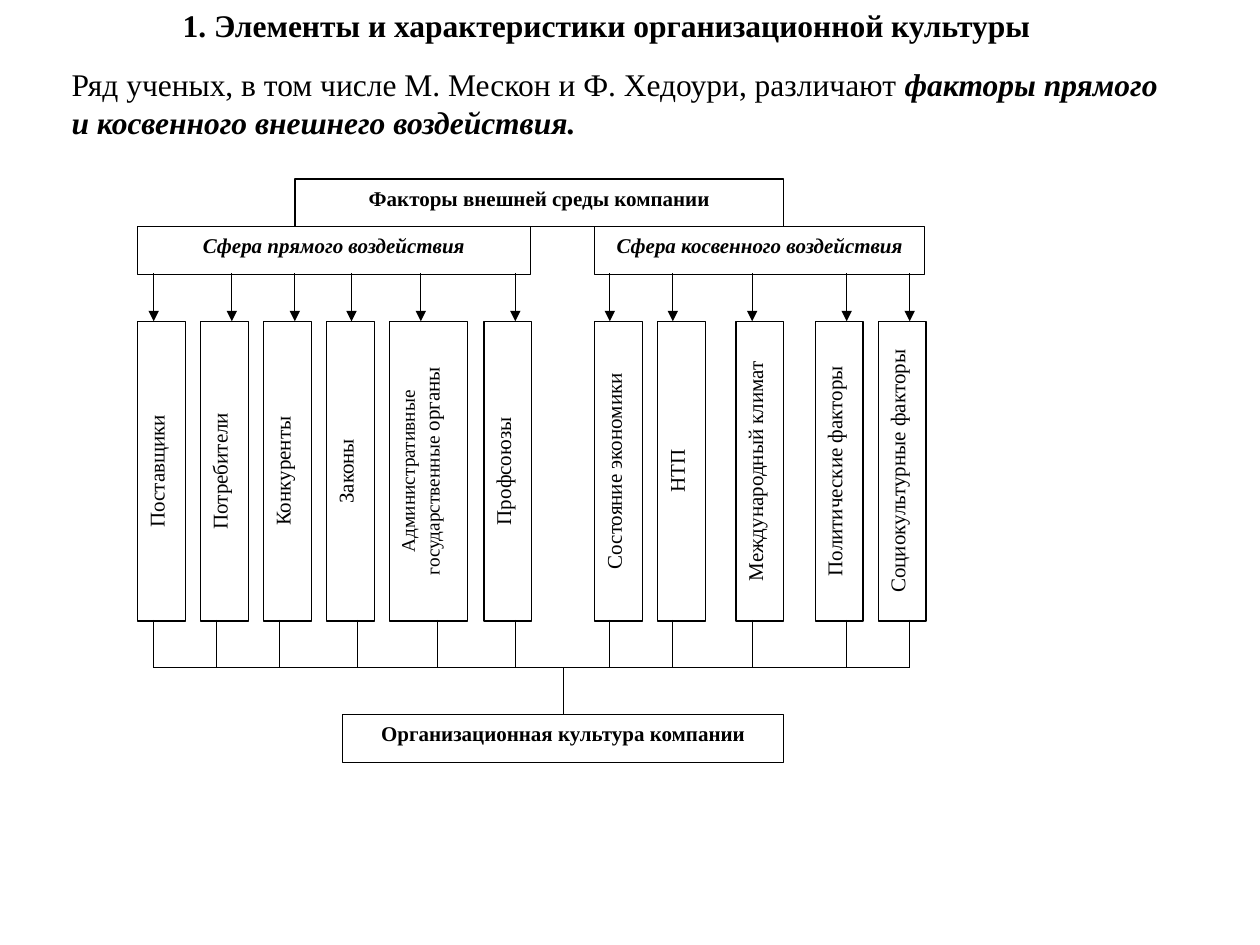
import pptx
import pptx.dml.color
import pptx.enum.shapes
import pptx.enum.text
import pptx.oxml.ns
import pptx.util
from lxml import etree

Inches = pptx.util.Inches
Pt = pptx.util.Pt
ALIGN = pptx.enum.text.PP_ALIGN
FONT = "Times New Roman"
COLORS = {"ink": "000000", "paper": "FFFFFF"}

# Rows of the diagram
BOX_H = 0.38
ROOT_Y, SPHERE_Y, FACTOR_Y, RESULT_Y = 1.42, 1.8, 2.55, 5.67
SPHERE_BOTTOM, FACTOR_BOTTOM, BUS_Y = 2.17, 4.92, 5.3
FACTOR_W, FACTOR_H = 0.38, 2.38

# Factor: left, width, arrow x, lower line x, runs as (text, size)
FACTORS = [
    (1.09, FACTOR_W, 1.22, 1.22, [("Поставщики", 12)]),
    (1.59, FACTOR_W, 1.84, 1.72, [("Потребители", 12)]),
    (2.09, FACTOR_W, 2.34, 2.22, [("Конкуренты", 12)]),
    (2.59, FACTOR_W, 2.79, 2.84, [("Законы", 12)]),
    (3.09, 0.62, 3.34, 3.47,
     [("Административные государственные ", 11), ("органы", 12)]),
    (3.84, FACTOR_W, 4.09, 4.09, [("Профсоюзы", 12)]),
    (4.72, FACTOR_W, 4.84, 4.84, [("Состояние экономики", 12)]),
    (5.22, FACTOR_W, 5.34, 5.34, [("НТП", 12)]),
    (5.84, FACTOR_W, 5.97, 5.97, [("Международный климат", 12)]),
    (6.47, FACTOR_W, 6.72, 6.72, [("Политические факторы", 12)]),
    (6.97, FACTOR_W, 7.22, 7.22, [("Социокультурные факторы", 12)]),
]


def rgb(name):
    return pptx.dml.color.RGBColor.from_string(COLORS[name])


def add_run(p, text, size, bold=False, italic=False):
    r = p.add_run()
    r.text = text
    r.font.name = FONT
    r.font.size = Pt(size)
    r.font.bold = bold
    r.font.italic = italic
    r.font.color.rgb = rgb("ink")


def set_up_frame(tf, align):
    tf.word_wrap = True
    tf.vertical_anchor = pptx.enum.text.MSO_ANCHOR.TOP
    p = tf.paragraphs[0]
    p.alignment = align
    return p


def add_title(s, text):
    sp = s.shapes.title
    sp.left, sp.top = Inches(0.39), Inches(0)
    sp.width, sp.height = Inches(8.91), Inches(0.4)
    p = set_up_frame(sp.text_frame, ALIGN.CENTER)
    sp.text_frame.auto_size = pptx.enum.text.MSO_AUTO_SIZE.SHAPE_TO_FIT_TEXT
    add_run(p, text, 18, bold=True)


def add_intro(s, plain, stressed):
    sp = s.shapes.add_textbox(Inches(0.47), Inches(0.47), Inches(8.98), Inches(0.71))
    p = set_up_frame(sp.text_frame, ALIGN.LEFT)
    sp.text_frame.auto_size = pptx.enum.text.MSO_AUTO_SIZE.SHAPE_TO_FIT_TEXT
    add_run(p, plain, 18)
    add_run(p, stressed, 18, bold=True, italic=True)


def add_box(s, x, y, w, h, runs, bold=False, italic=False, upright=False):
    sp = s.shapes.add_shape(pptx.enum.shapes.MSO_SHAPE.RECTANGLE,
                            Inches(x), Inches(y), Inches(w), Inches(h))
    sp.shadow.inherit = False
    sp.fill.solid()
    sp.fill.fore_color.rgb = rgb("paper")
    sp.line.color.rgb = rgb("ink")
    sp.line.width = Pt(0.75)
    tf = sp.text_frame
    p = set_up_frame(tf, ALIGN.CENTER)
    if upright:
        tf._txBody.bodyPr.set("vert", "vert270")
    for text, size in runs:
        add_run(p, text, size, bold, italic)


def add_line(s, x1, y1, x2, y2, arrow=False):
    line = s.shapes.add_connector(pptx.enum.shapes.MSO_CONNECTOR.STRAIGHT,
                                  Inches(x1), Inches(y1), Inches(x2), Inches(y2))
    line.line.color.rgb = rgb("ink")
    line.line.width = Pt(0.75)
    qn = pptx.oxml.ns.qn
    if arrow:
        etree.SubElement(line.line._get_or_add_ln(), qn("a:tailEnd"), type="triangle")
    etree.SubElement(line._element.spPr, qn("a:effectLst"))


def main():
    prs = pptx.Presentation()
    prs.slide_width, prs.slide_height = Inches(10), Inches(7.5)
    s = prs.slides.add_slide(prs.slide_layouts[5])

    # Heading and introduction
    add_title(s, "1. Элементы и характеристики организационной культуры ")
    add_intro(s, "Ряд ученых, в том числе М. Мескон и Ф. Хедоури, различают ",
              "факторы прямого и косвенного внешнего воздействия.")

    # Environment and its two spheres
    add_box(s, 2.34, ROOT_Y, 3.88, BOX_H,
            [("Факторы внешней среды компании", 12)], bold=True)
    for x, w, text in [(1.09, 3.12, "Сфера прямого воздействия"),
                       (4.72, 2.62, "Сфера косвенного воздействия")]:
        add_box(s, x, SPHERE_Y, w, BOX_H, [(text, 12)], bold=True, italic=True)

    # Factors with an arrow from above and a line down to the bus
    for x, w, arrow_x, drop_x, runs in FACTORS:
        add_box(s, x, FACTOR_Y, w, FACTOR_H, runs, upright=True)
        add_line(s, arrow_x, SPHERE_BOTTOM, arrow_x, FACTOR_Y, arrow=True)
        add_line(s, drop_x, FACTOR_BOTTOM, drop_x, BUS_Y)

    # Bus and resulting culture
    add_line(s, FACTORS[0][3], BUS_Y, FACTORS[-1][3], BUS_Y)
    add_box(s, 2.72, RESULT_Y, 3.5, BOX_H,
            [("Организационная культура компании", 12)], bold=True)
    add_line(s, 4.47, BUS_Y, 4.47, RESULT_Y)

    prs.save("out.pptx")


if __name__ == "__main__":
    main()
